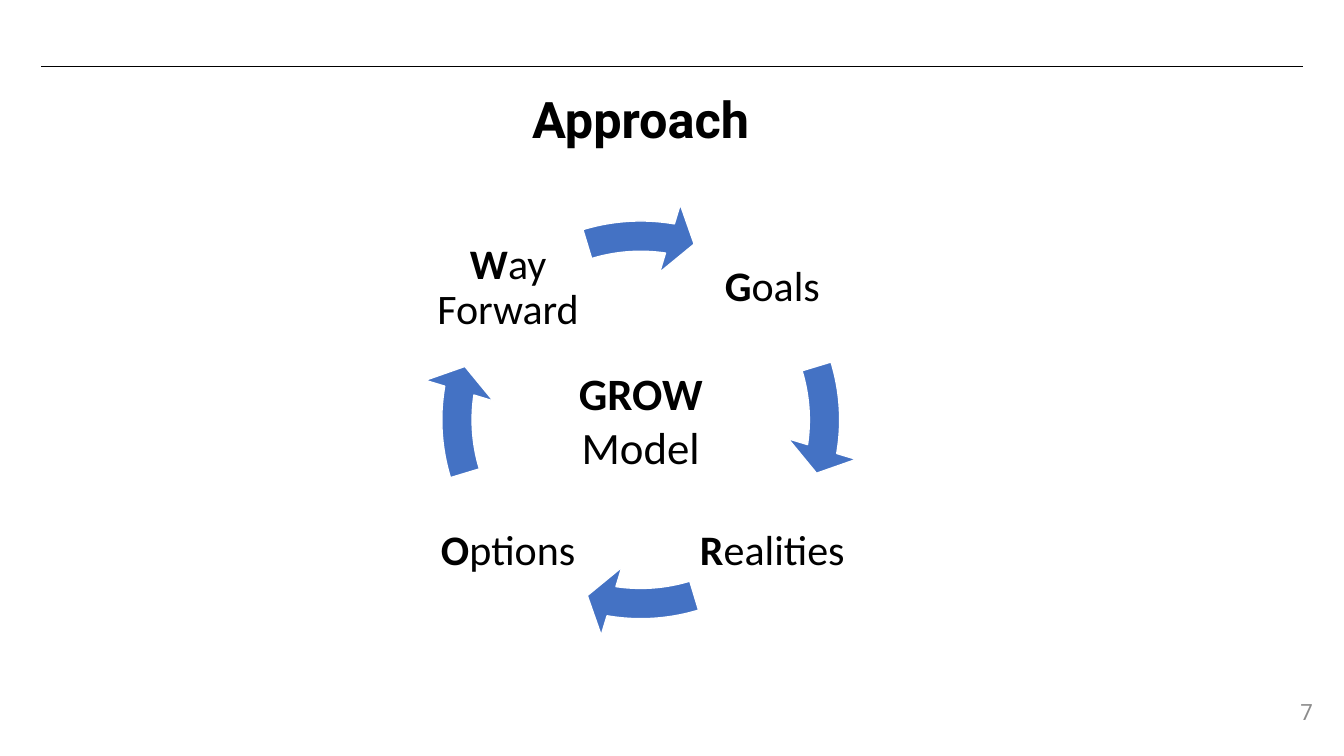
from dataclasses import dataclass

import pptx
import pptx.dml.color
import pptx.enum.shapes
import pptx.enum.text
import pptx.oxml
import pptx.oxml.ns
import pptx.util

Inches = pptx.util.Inches
Pt = pptx.util.Pt
ALIGN = pptx.enum.text.PP_ALIGN
ANCHOR = pptx.enum.text.MSO_ANCHOR

COLORS = {"ink": "000000", "arrow": "4472C4", "edge": "FFFFFF", "number": "8C8C8C"}


@dataclass
class Label:
    bold: str
    plain: str
    left: float
    top: float
    width: float
    height: float
    size: int
    font: str = "Calibri"
    color: str = "ink"
    inset: float = 0.04
    align: ALIGN = ALIGN.CENTER
    anchor: ANCHOR = ANCHOR.MIDDLE
    spacing: float = 0.9


def shade(name: str) -> pptx.dml.color.RGBColor:
    return pptx.dml.color.RGBColor.from_string(COLORS[name])


def apply(target: object, values: dict) -> None:
    for name, value in values.items():
        setattr(target, name, value)


def add_label(slide, label: Label) -> None:
    box = slide.shapes.add_textbox(
        Inches(label.left), Inches(label.top), Inches(label.width), Inches(label.height))
    frame = box.text_frame
    inset = Inches(label.inset)
    apply(frame, {"word_wrap": True, "vertical_anchor": label.anchor,
                  "margin_left": inset, "margin_right": inset,
                  "margin_top": Inches(min(label.inset, 0.05)),
                  "margin_bottom": Inches(min(label.inset, 0.05))})
    para = frame.paragraphs[0]
    apply(para, {"alignment": label.align, "line_spacing": label.spacing})
    for text, bold in ((label.bold, True), (label.plain, False)):
        if text:
            run = para.add_run()
            run.text = text
            apply(run.font, {"name": label.font, "size": Pt(label.size), "bold": bold})
            run.font.color.rgb = shade(label.color)


def add_arrow(slide, step: int) -> None:
    arrow = slide.shapes.add_shape(
        pptx.enum.shapes.MSO_SHAPE.CIRCULAR_ARROW,
        Inches(4.18), Inches(1.99), Inches(4.35), Inches(4.35))
    # Angles count 0.6 per degree: a quarter turn is 54, a full turn 216
    turn = 54 * step
    for i, value in enumerate((0.069, 4.655, 5.49 + turn, (205.856 + turn) % 216, 0.081)):
        arrow.adjustments[i] = value
    arrow.shadow.inherit = False
    arrow.fill.solid()
    arrow.fill.fore_color.rgb = shade("arrow")
    arrow.line.color.rgb = shade("edge")
    arrow.line.width = Pt(1)


def add_rule(slide) -> None:
    rule = slide.shapes.add_connector(
        pptx.enum.shapes.MSO_CONNECTOR.STRAIGHT,
        Inches(0.41), Inches(0.66), Inches(12.92), Inches(0.66))
    rule.line.color.rgb = shade("ink")
    rule.line.width = Pt(0.5)
    rule._element.spPr.append(pptx.oxml.parse_xml(
        f"<a:effectLst {pptx.oxml.ns.nsdecls('a')}/>"))


def main() -> None:
    deck = pptx.Presentation()
    apply(deck, {"slide_width": Inches(13.33), "slide_height": Inches(7.5)})
    slide = deck.slides.add_slide(deck.slide_layouts[6])

    # Header rule, page number and title
    add_rule(slide)
    add_label(slide, Label("", "7", 12.5, 6.79, 0.62, 0.45, 16, "Roboto", "number",
                           0.1, ALIGN.RIGHT, ANCHOR.BOTTOM, 1.0))
    add_label(slide, Label("Approach", "", 0.79, 0.4, 11.13, 1.63, 36, "Roboto", inset=0.1))

    # Cycle of stages, clockwise from the top right
    west, east, north, south = 4.27, 6.89, 2.09, 4.71
    stages = (("G", "oals", east, north), ("R", "ealities", east, south),
              ("O", "ptions", west, south), ("W", "ay Forward", west, north))
    for step, (first, rest, left, top) in enumerate(stages):
        add_label(slide, Label(first, rest, left, top, 1.54, 1.54, 30))
        add_arrow(slide, step)

    # Name of the model in the centre
    add_label(slide, Label("GROW", " Model", 5.16, 3.58, 2.39, 1.18, 32,
                           inset=0.1, anchor=ANCHOR.TOP, spacing=1.0))

    deck.save("out.pptx")


if __name__ == "__main__":
    main()
